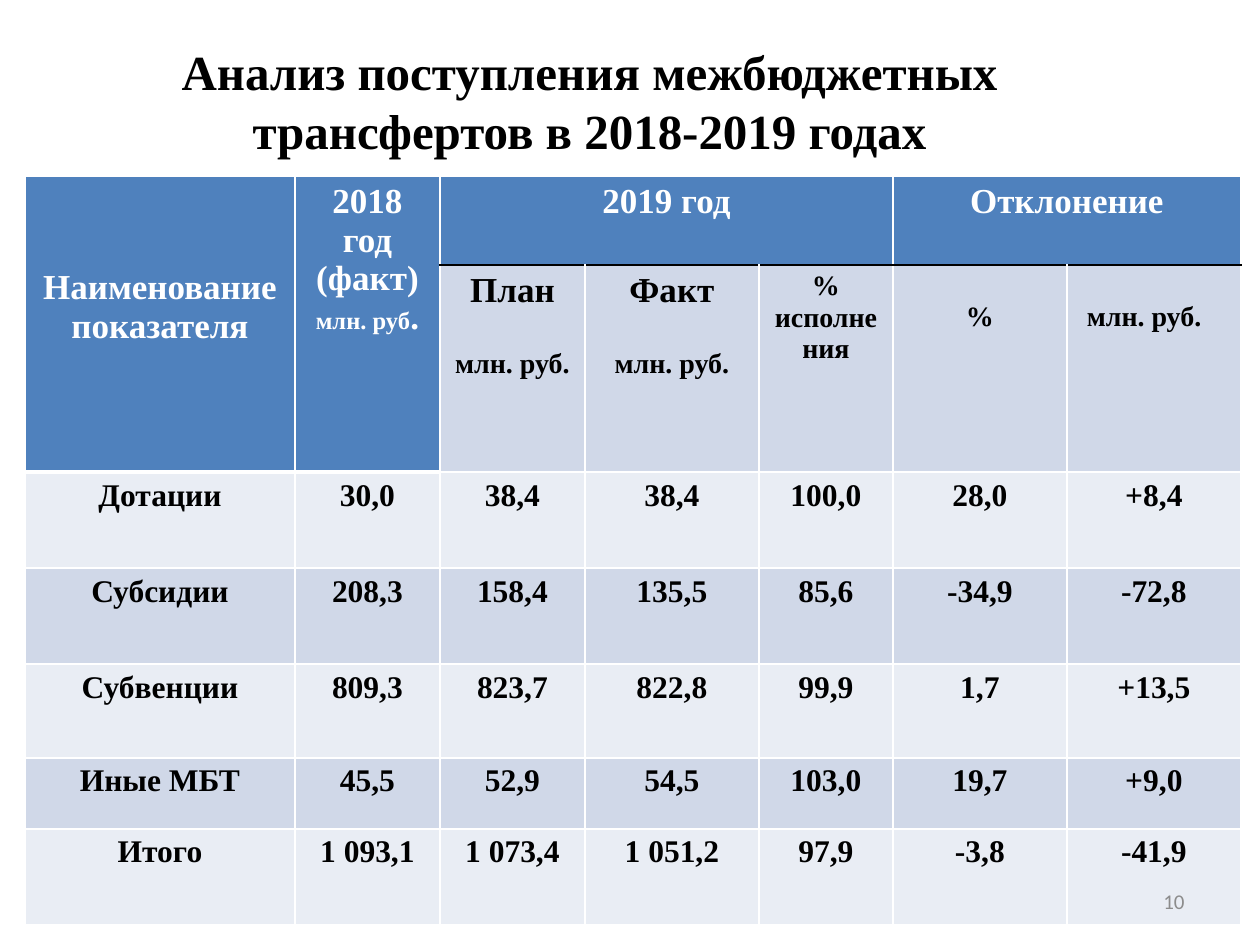
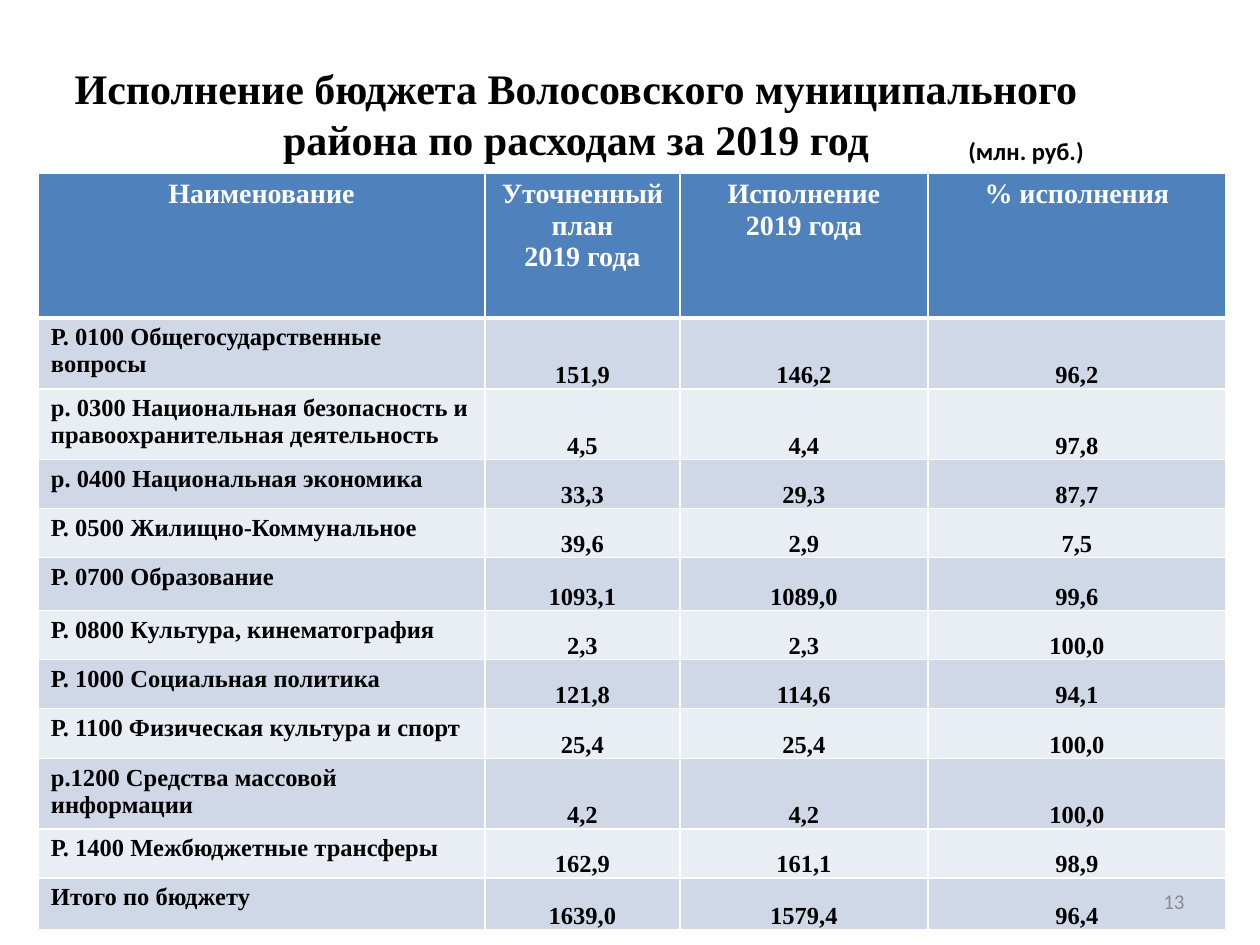
"""Builds two budget slides, each with a title, a bordered table and a page number."""
from itertools import accumulate

from lxml.etree import SubElement
from pptx import Presentation
from pptx.dml.color import RGBColor
from pptx.enum.text import MSO_ANCHOR, PP_ALIGN
from pptx.oxml.ns import qn
from pptx.util import Emu, Pt

COLOURS = {
    "header": "4F81BD", "band_dark": "D0D8E8", "band_light": "E9EDF4",
    "white": "FFFFFF", "black": "000000", "page": "8C8C8C",
}
SERIF, SANS = "Times New Roman", "Calibri"
PX_PER_INCH = 126
PAGE_NUMBER_BOX = (903, 876, 294, 50)
CELL_MARGINS = (13, 6, 13, 6)
FIGURE_MARGINS = (1, 1, 1, 0)

TRANSFERS = {
    "title": ("Анализ поступления межбюджетных трансфертов в 2018-2019 годах", 28, (64, 26, 1051, 149)),
    "page": "10",
    "at": (25, 176),
    "columns": [270, 145, 145, 174, 134, 174, 174],
    "heights": [89, 207, 96, 96, 94, 71, 96],
    "header_rows": 2,
    "spans": [(0, 0, 1, 0), (0, 1, 1, 1), (0, 2, 0, 4), (0, 5, 0, 6)],
    "rules": [(0, (0, 1), "white", 3), (1, (0, 1), "white", 3), (0, (2, 3, 4, 5, 6), "black", 1)],
    "headings": [
        (0, 0, [("Наименование", 20, 0), ("показателя", 20, 0)], {"top": 92}),
        (0, 1, [("2018 год (факт)", 20, 0), ([("млн. руб", 14), (".", 20)], 20, 0)], {}),
        (0, 2, [("2019 год", 20, 0)], {}),
        (0, 5, [("Отклонение", 20, 0)], {}),
        (1, 2, [("План", 20, 0), ("млн. руб.", 16, 22)], {}),
        (1, 3, [("Факт", 20, 0), ("млн. руб.", 16, 22)], {}),
        (1, 4, [("%", 16, 0), ("исполнения", 16, 0)], {}),
        (1, 5, [("%", 16, 0)], {"top": 37}),
        (1, 6, [("млн. руб.", 16, 0)], {"top": 37, "left": 20, "align": PP_ALIGN.LEFT}),
    ],
    "body": [
        ("Дотации", "30,0", "38,4", "38,4", "100,0", "28,0", "+8,4"),
        ("Субсидии", "208,3", "158,4", "135,5", "85,6", "-34,9", "-72,8"),
        ("Субвенции", "809,3", "823,7", "822,8", "99,9", "1,7", "+13,5"),
        ("Иные МБТ", "45,5", "52,9", "54,5", "103,0", "19,7", "+9,0"),
        ("Итого", "1 093,1", "1 073,4", "1 051,2", "97,9", "-3,8", "-41,9"),
    ],
    "body_size": 18,
    "label_align": PP_ALIGN.CENTER,
    "figure_margins": CELL_MARGINS,
    "figure_anchor": MSO_ANCHOR.TOP,
    "bands": ("band_light", "band_dark"),
}

EXPENSES = {
    "title": ("Исполнение бюджета Волосовского муниципального района по расходам за 2019 год", 24,
              (9, 34, 1134, 158)),
    "unit": ("(млн. руб.)", (956, 130, 149, 43)),
    "page": "13",
    "at": (38, 173),
    "columns": [447, 195, 248, 298],
    "heights": [145, 70, 70, 49, 49, 53, 49, 49, 50, 70, 49, 52],
    "header_rows": 1,
    "spans": [],
    "rules": [(0, (0, 1, 2, 3), "white", 3)],
    "headings": [
        (0, 0, [("Наименование", 16, 0)], {}),
        (0, 1, [("Уточненный план", 16, 0), ("2019 года", 16, 0)], {}),
        (0, 2, [("Исполнение", 16, 0), ("2019 года", 16, 0)], {}),
        (0, 3, [("% исполнения", 16, 0)], {}),
    ],
    "body": [
        ("Р. 0100 Общегосударственные вопросы", "151,9", "146,2", "96,2"),
        ("р. 0300 Национальная безопасность и правоохранительная деятельность", "4,5", "4,4", "97,8"),
        ("р. 0400 Национальная экономика", "33,3", "29,3", "87,7"),
        ("Р. 0500 Жилищно-Коммунальное", "39,6", "2,9", "7,5"),
        ("Р. 0700 Образование", "1093,1", "1089,0", "99,6"),
        ("Р. 0800 Культура, кинематография", "2,3", "2,3", "100,0"),
        ("Р. 1000 Социальная политика", "121,8", "114,6", "94,1"),
        ("Р. 1100 Физическая культура и спорт", "25,4", "25,4", "100,0"),
        ("р.1200 Средства массовой информации", "4,2", "4,2", "100,0"),
        ("Р. 1400 Межбюджетные трансферы", "162,9", "161,1", "98,9"),
        ("Итого по бюджету", "1639,0", "1579,4", "96,4"),
    ],
    "body_size": 14,
    "label_align": PP_ALIGN.LEFT,
    "figure_margins": FIGURE_MARGINS,
    "figure_anchor": MSO_ANCHOR.BOTTOM,
    "bands": ("band_dark", "band_light"),
}


def px(length):
    return Emu(round(length * 914400 / PX_PER_INCH))


def style(font, face, size, colour, bold):
    font.name, font.size, font.bold = face, Pt(size), bold
    font.color.rgb = RGBColor.from_string(COLOURS[colour])


def add_text(slide, box, text, face, size, colour, bold, align, anchor):
    frame = slide.shapes.add_textbox(*map(px, box)).text_frame
    frame.word_wrap = True
    frame.vertical_anchor = anchor
    line = frame.paragraphs[0]
    line.text, line.alignment = text, align
    style(line.font, face, size, colour, bold)


def fill_cell(cell, lines, colour, align, margins=CELL_MARGINS, anchor=MSO_ANCHOR.TOP):
    cell.margin_left, cell.margin_top, cell.margin_right, cell.margin_bottom = map(px, margins)
    cell.vertical_anchor = anchor
    frame = cell.text_frame
    for index, (text, size, space) in enumerate(lines):
        line = frame.add_paragraph() if index else frame.paragraphs[0]
        line.alignment = align
        if space:
            line.space_before = Pt(space)
        if isinstance(text, str):
            line.text = text
            style(line.font, SERIF, size, colour, True)
            continue
        for part, part_size in text:
            run = line.add_run()
            run.text = part
            style(run.font, SERIF, part_size, colour, True)


def set_borders(table, rules):
    edges = {}
    for row, columns, colour, width in rules:
        for column in columns:
            edges[row, column, "B"] = edges[row + 1, column, "T"] = (colour, width)
    for row in range(len(table.rows)):
        for column in range(len(table.columns)):
            properties = table.cell(row, column)._tc.get_or_add_tcPr()
            for side in "LRTB":
                colour, width = edges.get((row, column, side), ("white", 1))
                border = SubElement(properties, qn(f"a:ln{side}"), w=str(Pt(width)))
                solid = SubElement(border, qn("a:solidFill"))
                SubElement(solid, qn("a:srgbClr"), val=COLOURS[colour])


def set_fills(table, content):
    spanned = {(row, column)
               for top, left, bottom, right in content["spans"]
               for row in range(top, bottom + 1) for column in range(left, right + 1)}
    for row in range(len(table.rows)):
        for column in range(len(table.columns)):
            if row == 0 or (row, column) in spanned:
                colour = "header"
            elif row < content["header_rows"]:
                colour = "band_dark"
            else:
                colour = content["bands"][(row - content["header_rows"]) % 2]
            fill = table.cell(row, column).fill
            fill.solid()
            fill.fore_color.rgb = RGBColor.from_string(COLOURS[colour])


def add_budget_table(slide, content):
    columns, heights = content["columns"], content["heights"]
    box = (*content["at"], sum(columns), sum(heights))
    table = slide.shapes.add_table(len(heights), len(columns), *map(px, box)).table
    table.first_row = table.horz_banding = False
    for parts, lengths, attribute in ((table.columns, columns, "width"), (table.rows, heights, "height")):
        edges = [0, *accumulate(lengths)]
        for part, start, end in zip(parts, edges, edges[1:]):
            setattr(part, attribute, Emu(px(end) - px(start)))
    set_borders(table, content["rules"])
    set_fills(table, content)
    for top, left, bottom, right in content["spans"]:
        table.cell(top, left).merge(table.cell(bottom, right))
    for row, column, lines, layout in content["headings"]:
        left, top, right, bottom = CELL_MARGINS
        margins = (layout.get("left", left), layout.get("top", top), right, bottom)
        fill_cell(table.cell(row, column), lines, "black" if row else "white",
                  layout.get("align", PP_ALIGN.CENTER), margins)
    for row, (label, *figures) in enumerate(content["body"], content["header_rows"]):
        size = content["body_size"]
        fill_cell(table.cell(row, 0), [(label, size, 0)], "black", content["label_align"])
        for column, figure in enumerate(figures, 1):
            fill_cell(table.cell(row, column), [(figure, size, 0)], "black", PP_ALIGN.CENTER,
                      content["figure_margins"], content["figure_anchor"])


def add_budget_slide(deck, content):
    slide = deck.slides.add_slide(deck.slide_layouts[6])
    title, size, box = content["title"]
    add_text(slide, box, title, SERIF, size, "black", True, PP_ALIGN.CENTER, MSO_ANCHOR.MIDDLE)
    add_budget_table(slide, content)
    if "unit" in content:
        unit, box = content["unit"]
        add_text(slide, box, unit, SANS, 14, "black", True, PP_ALIGN.LEFT, MSO_ANCHOR.TOP)
    add_text(slide, PAGE_NUMBER_BOX, content["page"], SANS, 12, "page", False,
             PP_ALIGN.RIGHT, MSO_ANCHOR.MIDDLE)


def main():
    deck = Presentation()
    deck.slide_width, deck.slide_height = px(1260), px(945)
    for content in (TRANSFERS, EXPENSES):
        add_budget_slide(deck, content)
    deck.save("out.pptx")


if __name__ == "__main__":
    main()
